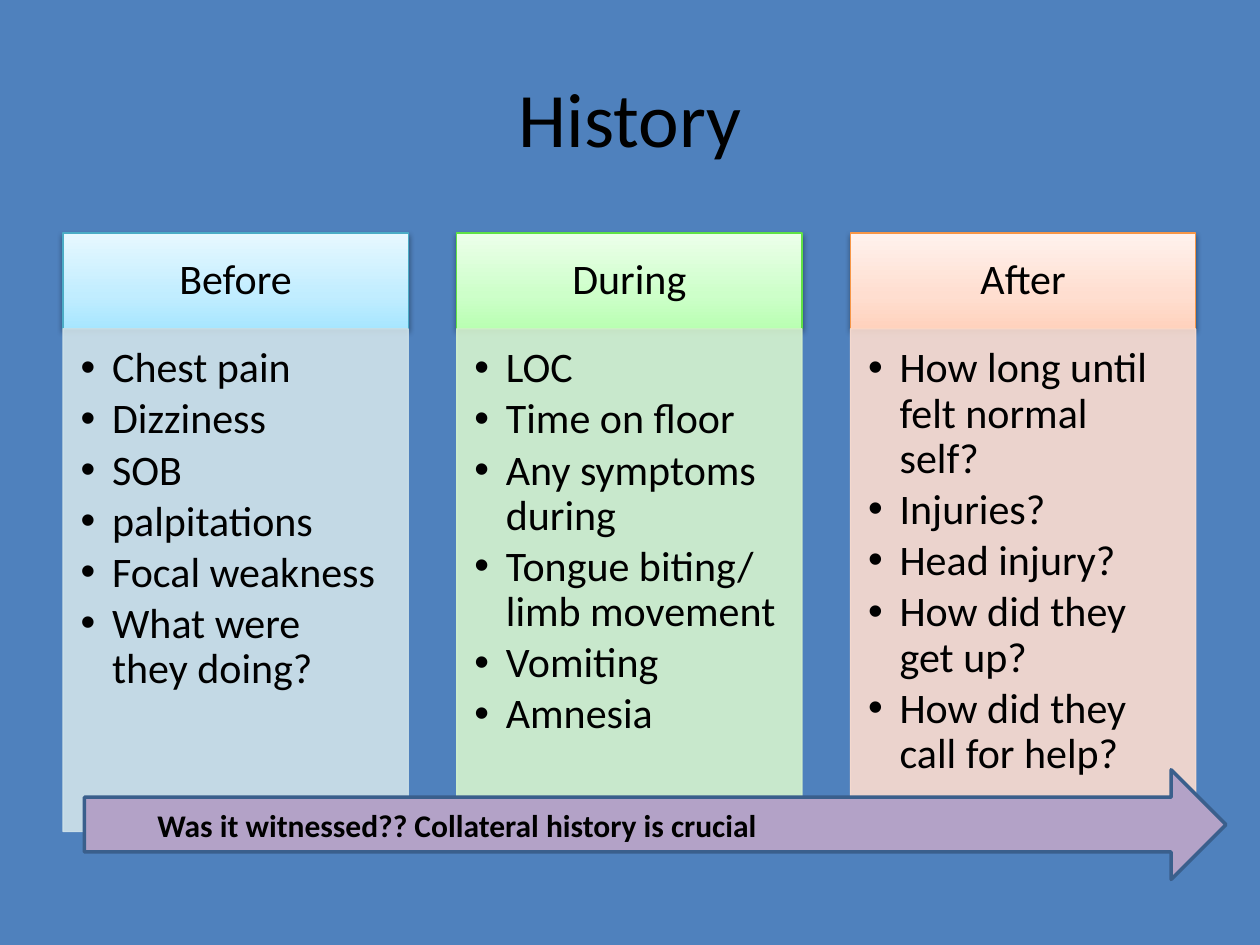
from copy import deepcopy
from dataclasses import dataclass

from pptx import Presentation, util as u
from pptx.dml.color import RGBColor
from pptx.enum import shapes, text
from pptx.oxml import parse_xml
from pptx.oxml.ns import nsdecls, qn

COLOURS = {
    "background": "4F81BD",
    "text": "000000",
    "arrow": "B3A2C7",
    "arrow_line": "3A5F8C",
}
FONT = "Calibri"
LEFT, TOP, STEP = 0.5, 1.85, 3.125
WIDTH, HEADER_HEIGHT, BODY_HEIGHT = 2.74, 0.76, 3.99


@dataclass
class Column:
    heading: str
    items: list[str]
    gradient: list[str]
    border: str
    body: str


COLUMNS = [
    Column("Before",
           ["Chest pain", "Dizziness", "SOB", "palpitations",
            "Focal weakness", "What were they doing?"],
           ["A7E6FF", "C1EDFF", "E7F8FF"], "4BACC6", "D0E3EA"),
    Column("During",
           ["LOC", "Time on floor", "Any symptoms during",
            "Tongue biting/ limb movement", "Vomiting", "Amnesia"],
           ["B9FFB2", "CDFFC9", "ECFFEA"], "60E146", "D6F4CE"),
    Column("After",
           ["How long until felt normal self?", "Injuries?", "Head injury?",
            "How did they get up?", "How did they call for help?"],
           ["FFD2BD", "FFDED0", "FFF2ED"], "F79646", "FCDDCF"),
]


def rgb(colour: str) -> RGBColor:
    return RGBColor.from_string(colour)


def place(box, left: float, top: float, width: float, height: float) -> None:
    box.left, box.top = u.Inches(left), u.Inches(top)
    box.width, box.height = u.Inches(width), u.Inches(height)


def set_frame(box, anchor, **margins: float) -> None:
    frame = box.text_frame
    frame.word_wrap = True
    frame.vertical_anchor = anchor
    for side, length in margins.items():
        setattr(frame, f"margin_{side}", u.Inches(length))


def write(para, words: str, size: float, bold: bool = False, **layout) -> None:
    for name, value in layout.items():
        setattr(para, name, value)
    span = para.add_run()
    span.text = words
    formats = {"name": FONT, "size": u.Pt(size), "bold": bold}
    for name, value in formats.items():
        setattr(span.font, name, value)
    span.font.color.rgb = rgb(COLOURS["text"])


def add_block(page, kind, at: tuple, line: str, line_width: float):
    box = page.shapes.add_shape(kind, *(u.Inches(length) for length in at))
    box.line.color.rgb = rgb(line)
    box.line.width = u.Pt(line_width)
    box.shadow.inherit = False
    return box


def fill_gradient(box, colours: list[str]) -> None:
    box.fill.gradient()
    box.fill.gradient_angle = 90
    stop_list = box._element.spPr.find(".//" + qn("a:gsLst"))
    stop_list.append(deepcopy(stop_list[-1]))
    for stop, colour, position in zip(box.fill.gradient_stops, colours, (0, 0.35, 1)):
        stop.color.rgb = rgb(colour)
        stop.position = position


def add_shadow(box) -> None:
    effects = box._element.spPr.find(qn("a:effectLst"))
    effects.append(parse_xml(
        f'<a:outerShdw {nsdecls("a")} blurRad="40000" dist="20000" dir="5400000" '
        'rotWithShape="0"><a:srgbClr val="000000"><a:alpha val="38000"/>'
        '</a:srgbClr></a:outerShdw>'))


def make_translucent(box, percent: int) -> None:
    for colour in box._element.spPr.iter(qn("a:srgbClr")):
        colour.append(parse_xml(f'<a:alpha {nsdecls("a")} val="{percent * 1000}"/>'))


def add_bullet(para) -> None:
    properties = para._p.get_or_add_pPr()
    properties.set("marL", str(u.Inches(0.25)))
    properties.set("indent", str(u.Inches(-0.25)))
    properties.append(parse_xml(f'<a:buFont {nsdecls("a")} typeface="Arial"/>'))
    properties.append(parse_xml(f'<a:buChar {nsdecls("a")} char="•"/>'))


def add_column(page, column: Column, left: float) -> None:
    rectangle = shapes.MSO_SHAPE.RECTANGLE

    # Heading
    header = add_block(page, rectangle, (left, TOP, WIDTH, HEADER_HEIGHT),
                       column.border, 0.75)
    fill_gradient(header, column.gradient)
    add_shadow(header)
    set_frame(header, text.MSO_ANCHOR.MIDDLE, left=0.19, top=0.11, right=0.19, bottom=0.11)
    write(header.text_frame.paragraphs[0], column.heading, 24,
          alignment=text.PP_ALIGN.CENTER, line_spacing=0.9)

    # Bulleted list
    body = add_block(page, rectangle, (left, TOP + HEADER_HEIGHT, WIDTH, BODY_HEIGHT),
                     column.body, 0.75)
    body.fill.solid()
    body.fill.fore_color.rgb = rgb(column.body)
    make_translucent(body, 90)
    set_frame(body, text.MSO_ANCHOR.TOP, left=0.14, top=0.14, right=0.19, bottom=0.21)
    frame = body.text_frame
    for index, item in enumerate(column.items):
        para = frame.add_paragraph() if index else frame.paragraphs[0]
        add_bullet(para)
        write(para, item, 24, alignment=text.PP_ALIGN.LEFT, level=1,
              line_spacing=0.9, space_after=u.Pt(3.3))


def main() -> None:
    deck = Presentation()
    deck.slide_width, deck.slide_height = u.Inches(10), u.Inches(7.5)
    page = deck.slides.add_slide(deck.slide_layouts[5])
    page.background.fill.solid()
    page.background.fill.fore_color.rgb = rgb(COLOURS["background"])

    # Title
    title = page.shapes.title
    place(title, 0.5, 0.3, 9, 1.25)
    set_frame(title, text.MSO_ANCHOR.MIDDLE)
    write(title.text_frame.paragraphs[0], "History", 44, alignment=text.PP_ALIGN.CENTER)

    # Three stages
    for index, column in enumerate(COLUMNS):
        add_column(page, column, LEFT + index * STEP)

    # Arrow under the stages
    arrow = add_block(page, shapes.MSO_SHAPE.RIGHT_ARROW, (0.67, 6.11, 9.06, 0.87),
                      COLOURS["arrow_line"], 2)
    arrow.fill.solid()
    arrow.fill.fore_color.rgb = rgb(COLOURS["arrow"])

    # Arrow caption
    caption = page.shapes.add_textbox(0, 0, 0, 0)
    place(caption, 0.65, 6.35, 8.35, 0.4)
    set_frame(caption, text.MSO_ANCHOR.TOP)
    write(caption.text_frame.paragraphs[0],
          "\tWas it witnessed?? Collateral history is crucial", 18, bold=True)

    deck.save("out.pptx")


if __name__ == "__main__":
    main()
